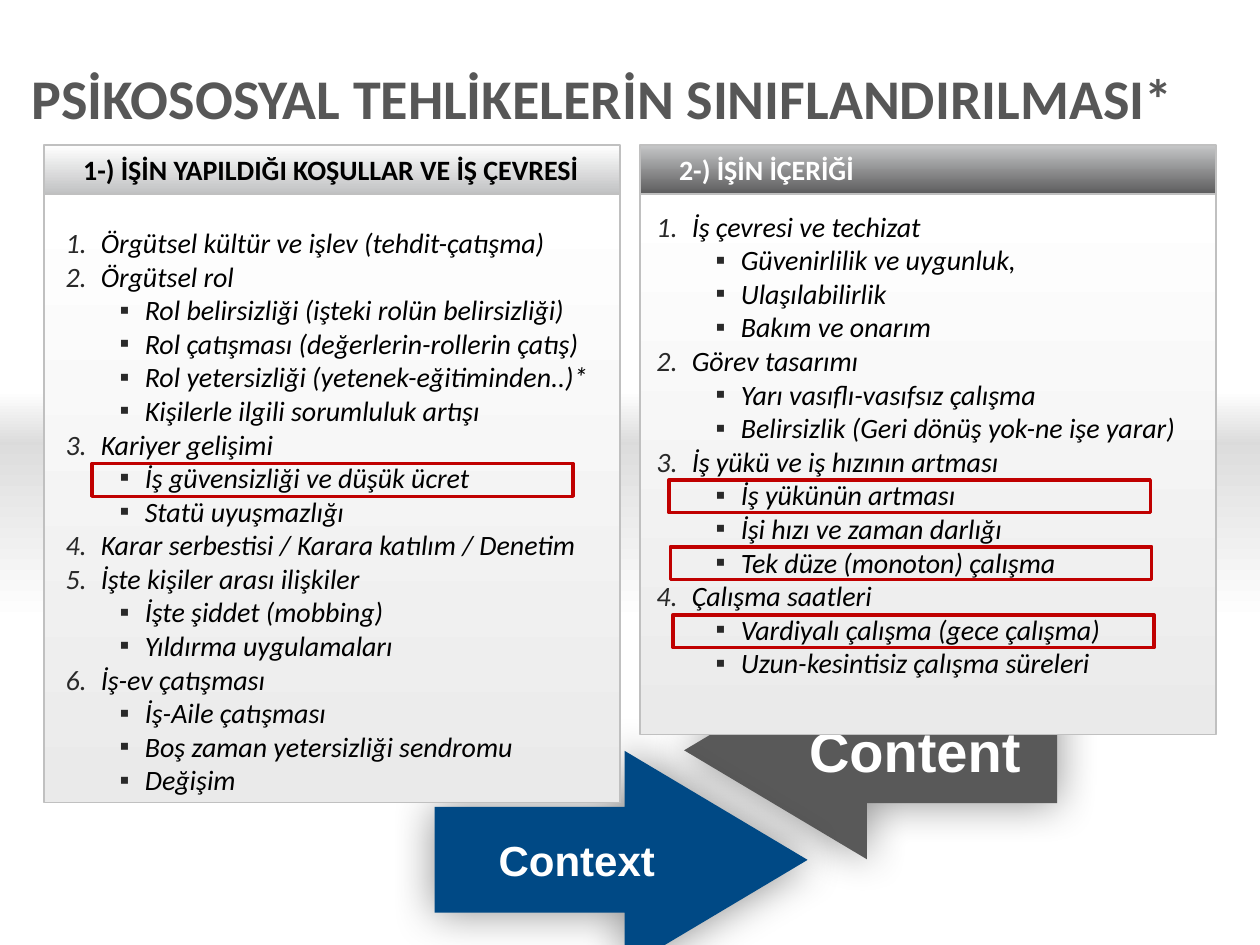
from lxml import etree
from pptx import Presentation
from pptx.dml.color import RGBColor
from pptx.enum.shapes import MSO_SHAPE
from pptx.enum.text import MSO_ANCHOR, MSO_AUTO_SIZE, PP_ALIGN
from pptx.oxml.ns import qn
from pptx.util import Inches, Pt

RECTANGLE = MSO_SHAPE.RECTANGLE
LEFT_ARROW, RIGHT_ARROW = MSO_SHAPE.LEFT_ARROW, MSO_SHAPE.RIGHT_ARROW
LEFT, CENTER = PP_ALIGN.LEFT, PP_ALIGN.CENTER
TOP, MIDDLE = MSO_ANCHOR.TOP, MSO_ANCHOR.MIDDLE

COLORS = {
    "white": "FFFFFF", "black": "000000", "bullet": "292929",
    "title": "575757", "highlight": "C00000",
    "content": "595959", "context": "004985", "border": "C0C0C0",
    "band_top": "DBDBDB", "band_bottom": "DDDDDD", "panel": "EAEAEA",
    "light_header": "C1C2C3", "dark_top": "C6C7C8", "dark_bottom": "5C5C5D",
}
UNIT = 0.1  # inches per grid column and row: 100 columns by 75 rows
PANEL_WIDTH, PANEL_TOP, HEADER_HEIGHT = 45.7, 11.5, 3.9

CONDITIONS = [
    ("Örgütsel kültür ve işlev (tehdit-çatışma)", []),
    ("Örgütsel rol", [
        "Rol belirsizliği (işteki rolün belirsizliği)",
        "Rol çatışması (değerlerin-rollerin çatış)",
        "Rol yetersizliği (yetenek-eğitiminden..)*",
        "Kişilerle ilgili sorumluluk artışı"]),
    ("Kariyer gelişimi", ["İş güvensizliği ve düşük ücret", "Statü uyuşmazlığı"]),
    ("Karar serbestisi / Karara katılım / Denetim", []),
    ("İşte kişiler arası ilişkiler", ["İşte şiddet (mobbing)", "Yıldırma uygulamaları"]),
    ("İş-ev çatışması", ["İş-Aile çatışması", "Boş zaman yetersizliği sendromu", "Değişim"]),
]
WORK_CONTENT = [
    ("İş çevresi ve techizat", [
        "Güvenirlilik ve uygunluk,", "Ulaşılabilirlik", "Bakım ve onarım"]),
    ("Görev tasarımı", [
        "Yarı vasıflı-vasıfsız çalışma", "Belirsizlik (Geri dönüş yok-ne işe yarar)"]),
    ("İş yükü ve iş hızının artması", [
        "İş yükünün artması", "İşi hızı ve zaman darlığı", "Tek düze (monoton) çalışma"]),
    ("Çalışma saatleri", [
        "Vardiyalı çalışma (gece çalışma)", "Uzun-kesintisiz çalışma süreleri"]),
]
HIGHLIGHTS = [(7.3, 36.8), (53.1, 38.1), (53.2, 43.4), (53.4, 48.8)]


def rgb(name):
    return RGBColor.from_string(COLORS[name])


def grid(*values):
    return [Inches(value * UNIT) for value in values]


def add_bullet(paragraph, numbered, indent):
    """Number a topic, or put a small square before a sub-topic."""
    properties = paragraph._p.get_or_add_pPr()
    hanging = 0.28 if numbered else 0.2
    properties.set("marL", str(Inches(indent)))
    properties.set("indent", str(-Inches(hanging)))
    color = etree.SubElement(properties, qn("a:buClr"))
    etree.SubElement(color, qn("a:srgbClr"), val=COLORS["bullet"])
    etree.SubElement(properties, qn("a:buFont"), typeface="Calibri" if numbered else "Arial")
    if numbered:
        etree.SubElement(properties, qn("a:buAutoNum"), type="arabicPeriod")
    else:
        etree.SubElement(properties, qn("a:buChar"), char="▪")


def add_text(paragraph, text, size=16, color="black", font="Calibri",
             bold=False, italic=False, align=LEFT, spacing=1.0):
    paragraph.alignment = align
    paragraph.line_spacing = spacing
    paragraph.space_before = Pt(0)
    run = paragraph.add_run()
    run.text = text
    run.font.name, run.font.size = font, Pt(size)
    run.font.bold, run.font.italic = bold, italic
    run.font.color.rgb = rgb(color)


class SlideBuilder:
    def __init__(self, presentation):
        self.slide = presentation.slides.add_slide(presentation.slide_layouts[4])
        self.placeholders = {
            item.placeholder_format.idx: item for item in self.slide.placeholders}

    def placeholder(self, index, box):
        """Place a template placeholder in front of everything drawn so far."""
        shape = self.placeholders[index]
        self.slide.shapes._spTree.append(shape._element)
        shape.left, shape.top, shape.width, shape.height = grid(*box)
        return shape

    def frame(self, shape, insets=(0, 0, 0, 0), anchor=MIDDLE):
        frame = shape.text_frame
        frame.word_wrap = True
        frame.auto_size = MSO_AUTO_SIZE.NONE
        frame.vertical_anchor = anchor
        (frame.margin_left, frame.margin_top,
         frame.margin_right, frame.margin_bottom) = map(Inches, insets)
        return frame

    def gradient(self, shape, colors):
        shape.fill.gradient()
        shape.fill.gradient_angle = 270
        for stop, color in zip(shape.fill.gradient_stops, colors):
            stop.color.rgb = rgb(color)

    def border(self, shape, color, width):
        shape.line.color.rgb = rgb(color)
        shape.line.width = Pt(width)

    def shape(self, kind, box):
        shape = self.slide.shapes.add_shape(kind, *grid(*box))
        shape.shadow.inherit = False
        return shape

    def band(self, top, height, colors):
        band = self.shape(RECTANGLE, (0, top, 100, height))
        self.gradient(band, colors)
        band.line.fill.background()

    def arrow(self, kind, left, top, color, text, size):
        arrow = self.shape(kind, (left, top, 29.6, 17.3))
        arrow.adjustments[0], arrow.adjustments[1] = 0.485, 0.839
        arrow.fill.solid()
        arrow.fill.fore_color.rgb = rgb(color)
        arrow.line.fill.background()
        effects = arrow._element.spPr.find(qn("a:effectLst"))
        shadow = etree.SubElement(effects, qn("a:outerShdw"), blurRad=str(Pt(25)),
                                  dist="0", dir="2700000", rotWithShape="0")
        shade = etree.SubElement(shadow, qn("a:srgbClr"), val=COLORS["black"])
        etree.SubElement(shade, qn("a:alpha"), val="43000")
        add_text(self.frame(arrow).paragraphs[0], text, size=size, color="white",
                 font="Arial", bold=True, align=CENTER)

    def title(self, text):
        shape = self.placeholder(0, (2.5, 4.5, 96.4, 7.1))
        frame = self.frame(shape, (0, 0.05, 0, 0.05))
        add_text(frame.paragraphs[0], text, size=32, color="title", bold=True, spacing=0.9)

    def panel(self, index, left, height, heading, heading_color, header_colors,
              outline, topic_indent, top_inset):
        """Build a header placeholder and the outline placeholder below it."""
        header = self.placeholder(index, (left, PANEL_TOP, PANEL_WIDTH, HEADER_HEIGHT))
        body = self.placeholder(
            index + 1, (left, PANEL_TOP + HEADER_HEIGHT, PANEL_WIDTH, height))
        for shape, colors in ((header, header_colors), (body, ("white", "panel"))):
            self.gradient(shape, colors)
            self.border(shape, "border", 1)
        add_text(self.frame(header, (0.31, 0, 0, 0)).paragraphs[0], heading,
                 color=heading_color, bold=True)
        frame = self.frame(body, (0.12, top_inset, 0.16, 0.08), TOP)
        lines = [(text, level) for topic, details in outline
                 for text, level in [(topic, 0)] + [(detail, 1) for detail in details]]
        for number, (text, level) in enumerate(lines):
            paragraph = frame.add_paragraph() if number else frame.paragraphs[0]
            paragraph.level = level
            add_bullet(paragraph, level == 0, 0.68 if level else topic_indent)
            add_text(paragraph, text, italic=True)

    def highlight(self, left, top):
        outline = self.shape(RECTANGLE, (left, top, 38.2, 2.6))
        outline.fill.background()
        self.border(outline, "highlight", 2)


def main():
    presentation = Presentation()
    presentation.slide_width, presentation.slide_height = grid(100, 75)
    builder = SlideBuilder(presentation)
    builder.band(35.2, 14.2, ("band_bottom", "white"))
    builder.band(31, 4.3, ("white", "band_top"))
    builder.arrow(LEFT_ARROW, 54.3, 50.9, "content", "Content", 32)
    builder.arrow(RIGHT_ARROW, 34.5, 59.6, "context", "Context", 24)
    builder.panel(1, 3.5, 48.3, "1-) İŞİN YAPILDIĞI KOŞULLAR VE İŞ ÇEVRESİ", "black",
                  ("white", "light_header"), CONDITIONS, 0.33, 0.25)
    builder.panel(3, 50.8, 42.9, "2-) İŞİN İÇERİĞİ", "white",
                  ("dark_top", "dark_bottom"), WORK_CONTENT, 0.29, 0.12)
    builder.title("PSİKOSOSYAL TEHLİKELERİN SINIFLANDIRILMASI*")
    for left, top in HIGHLIGHTS:
        builder.highlight(left, top)
    presentation.save("out.pptx")


if __name__ == "__main__":
    main()
